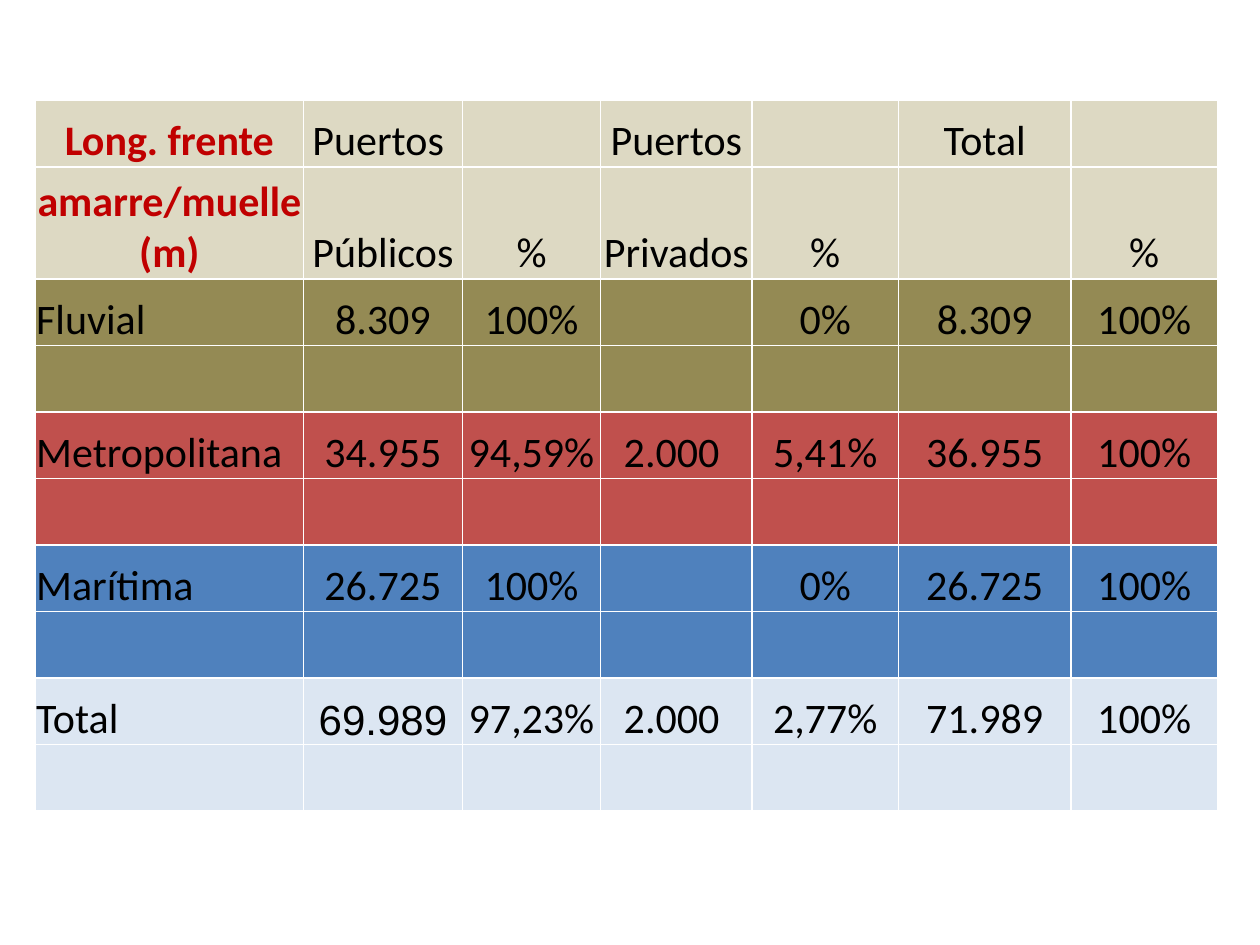
from dataclasses import dataclass

from lxml.etree import SubElement
from pptx import Presentation
from pptx.dml.color import RGBColor
from pptx.enum.text import MSO_ANCHOR, PP_ALIGN
from pptx.oxml.ns import qn
from pptx.util import Cm, Pt


@dataclass(frozen=True)
class Theme:
    font: str = "Calibri"
    alternate_font: str = "Arial"
    size: int = 24
    border_width: int = 1
    white: str = "FFFFFF"
    text: str = "000000"
    accent: str = "C00000"
    header: str = "DDD9C3"
    fluvial: str = "948A54"
    metropolitan: str = "C0504D"
    maritime: str = "4F81BD"
    total: str = "DCE6F2"


THEME = Theme()
EMPTY = [""] * 7
COLUMN_WIDTHS = [5.41, 3.2, 2.79, 3.05, 2.95, 3.48, 2.95]
ROW_HEIGHTS = [1.12, 1.34, 2.26] + [1.34] * 8
HEADER_ROWS = 3
ROWS = [
    (THEME.white, EMPTY),
    (THEME.header, ["Long. frente", "Puertos ", "", "Puertos", "", "Total", ""]),
    (THEME.header, ["amarre/muelle (m)", "Públicos", "%", "Privados", "%", "", "%"]),
    (THEME.fluvial, ["Fluvial", "8.309", "100%", "", "0%", "8.309", "100%"]),
    (THEME.fluvial, EMPTY),
    (THEME.metropolitan,
     ["Metropolitana", "34.955", "94,59%", "2.000 ", "5,41%", "36.955", "100%"]),
    (THEME.metropolitan, EMPTY),
    (THEME.maritime, ["Marítima", "26.725", "100%", "", "0%", "26.725", "100%"]),
    (THEME.maritime, EMPTY),
    (THEME.total, ["Total", "69.989", "97,23%", "2.000 ", "2,77%", "71.989", "100%"]),
    (THEME.total, EMPTY),
]


def set_borders(cell):
    properties = cell._tc.get_or_add_tcPr()
    for side in ("a:lnL", "a:lnR", "a:lnT", "a:lnB"):
        line = SubElement(properties, qn(side), w=str(Pt(THEME.border_width)))
        SubElement(SubElement(line, qn("a:solidFill")), qn("a:srgbClr"), val=THEME.white)


def write_cell(cell, text, is_label, is_header, font_name):
    cell.vertical_anchor = MSO_ANCHOR.BOTTOM
    cell.margin_left = cell.margin_right = cell.margin_top = Cm(0.02)
    cell.margin_bottom = 0
    cell.text_frame.text = text
    para = cell.text_frame.paragraphs[0]
    para.alignment = PP_ALIGN.LEFT if is_label and not is_header else PP_ALIGN.CENTER
    highlighted = is_label and is_header
    for span in para.runs:
        span.font.name = font_name
        span.font.size = Pt(THEME.size)
        span.font.bold = highlighted
        span.font.color.rgb = RGBColor.from_string(THEME.accent if highlighted else THEME.text)


def add_berth_table(page, left, top):
    frame = page.shapes.add_table(
        len(ROWS), len(COLUMN_WIDTHS), Cm(left), Cm(top),
        Cm(sum(COLUMN_WIDTHS)), Cm(sum(ROW_HEIGHTS)))
    table = frame.table
    table.first_row = table.horz_banding = False
    for column, width in zip(table.columns, COLUMN_WIDTHS):
        column.width = Cm(width)
    for row, height in zip(table.rows, ROW_HEIGHTS):
        row.height = Cm(height)

    for row_index, (color, texts) in enumerate(ROWS):
        for column_index, text in enumerate(texts):
            cell = table.cell(row_index, column_index)
            set_borders(cell)
            cell.fill.solid()
            cell.fill.fore_color.rgb = RGBColor.from_string(color)
            if text:
                font_name = THEME.alternate_font if text == "69.989" else THEME.font
                write_cell(cell, text, column_index == 0, row_index < HEADER_ROWS, font_name)


def main():
    deck = Presentation()
    deck.slide_width, deck.slide_height = Cm(25.4), Cm(19.05)
    page = deck.slides.add_slide(deck.slide_layouts.get_by_name("Blank"))
    add_berth_table(page, left=0.71, top=0.91)
    deck.save("out.pptx")


if __name__ == "__main__":
    main()
